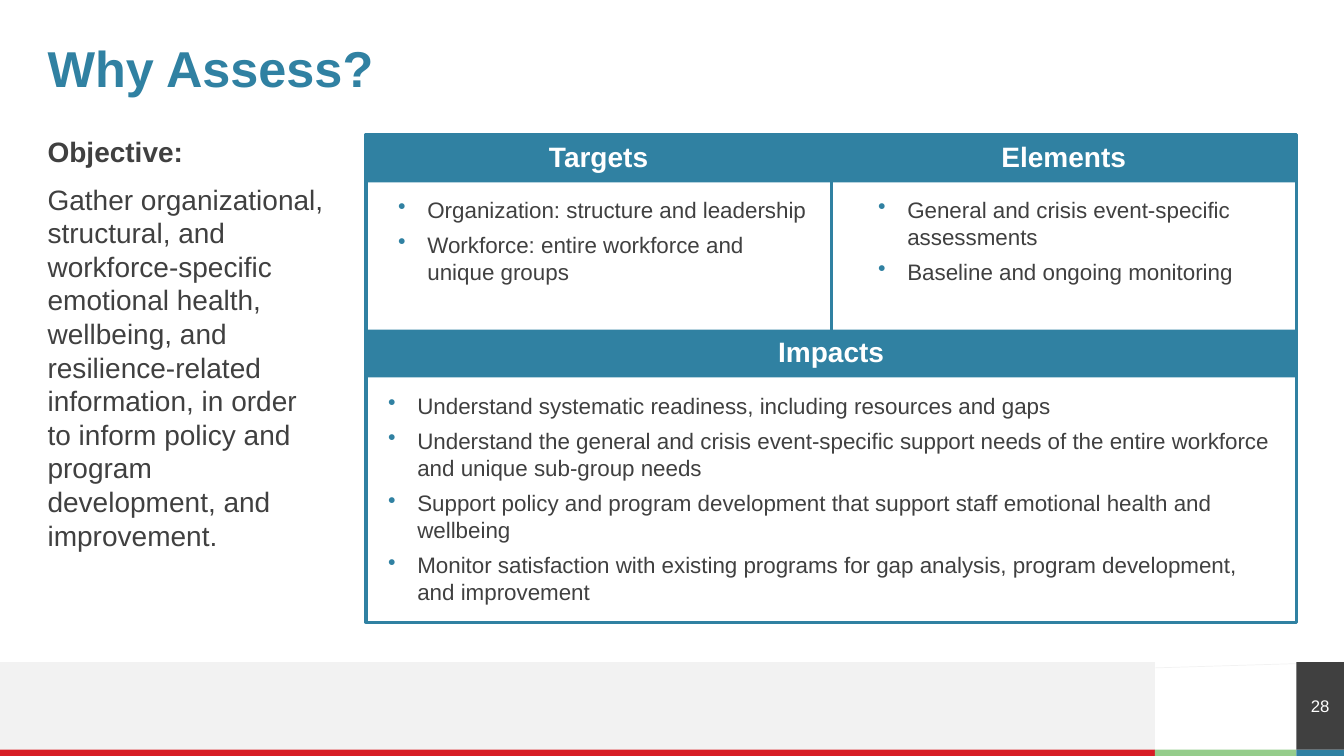
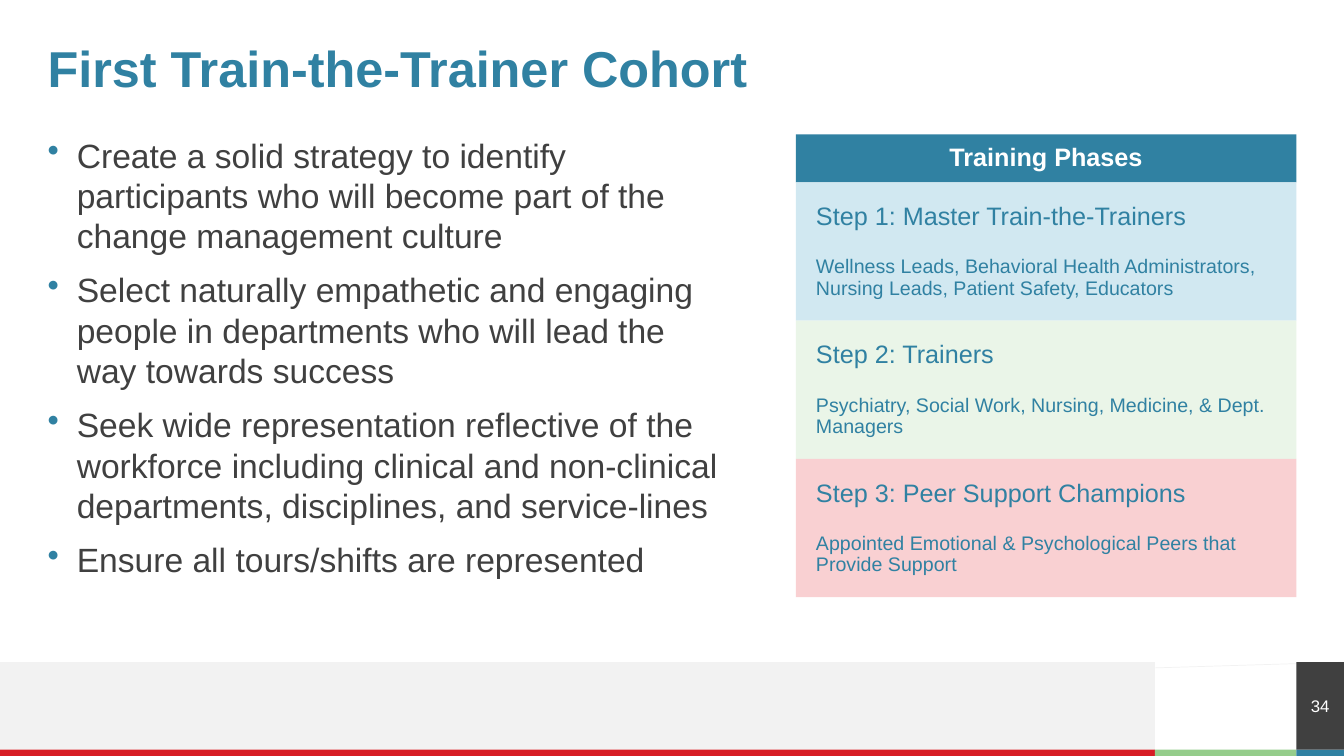
from lxml.etree import SubElement as Sub
from pptx import Presentation
from pptx.dml.color import RGBColor as Rgb
from pptx.enum.shapes import MSO_CONNECTOR as Conn, MSO_SHAPE as Kind
from pptx.enum.text import MSO_ANCHOR as Anchor, MSO_AUTO_SIZE as Auto, PP_ALIGN as Align
from pptx.oxml.ns import qn
from pptx.util import Pt

HUES = {
    "teal": "3081A2", "dark": "404040", "white": "FFFFFF", "grey": "F2F2F2",
    "red": "D71D24", "green": "95CD8B", "sky": "D1E8F1", "mint": "EAF5E8", "rose": "F9D0D2",
}
WIDE, HIGH = 960, 540
LEFT, RIGHT, TOP = 34, 926, 96
HEAD = 34.2
HANG = 20.9
FOOT, STRIP, SPLIT = 473, 535.5, 825

TITLE = {"size": 36, "bold": True, "color": "teal"}
LABEL = {"size": 20, "bold": True, "color": "white"}
BODY = {"size": 20, "color": "dark"}
SMALL = {"size": 16, "color": "dark"}
LARGE = {"size": 24, "color": "dark"}
STEP = {"size": 18, "color": "teal"}
DETAIL = {"size": 14, "color": "teal"}
PAGE = {"size": 12, "color": "white"}


def hue(name):
    return Rgb.from_string(HUES[name])


def place(box):
    return [Pt(n) for n in box]


def style(font, look):
    vals = {"name": "Arial", "bold": False, **look}
    font.color.rgb = hue(vals.pop("color"))
    vals["size"] = Pt(vals["size"])
    for key, val in vals.items():
        setattr(font, key, val)


def dot(para):
    props = para._p.get_or_add_pPr()
    props.set("marL", str(Pt(HANG)))
    props.set("indent", str(-Pt(HANG)))
    tint = Sub(props, qn("a:buClr"))
    Sub(tint, qn("a:srgbClr"), val=HUES["teal"])
    Sub(props, qn("a:buChar"), char="•")


def write(frame, lines, gap=0, space=None, align=Align.LEFT, anchor=Anchor.TOP, inset=0, dots=False):
    for key, val in {"word_wrap": True, "auto_size": Auto.NONE, "vertical_anchor": anchor}.items():
        setattr(frame, key, val)
    for side in ("left", "top", "right", "bottom"):
        setattr(frame, f"margin_{side}", Pt(inset))
    for i, (text, look) in enumerate(lines):
        para = frame.add_paragraph() if i else frame.paragraphs[0]
        if dots:
            dot(para)
        para.alignment = align
        para.space_before = Pt(gap if i else 0)
        if space:
            para.line_spacing = space
        run = para.add_run()
        run.text = text
        style(run.font, look)


def text(slide, box, lines, **opts):
    write(slide.shapes.add_textbox(*place(box)).text_frame, lines, **opts)


def points(slide, box, items, look, gap):
    text(slide, box, [(item, look) for item in items], gap=gap, dots=True)


def block(slide, box, fill=None, line=None):
    shape = slide.shapes.add_shape(Kind.RECTANGLE, *place(box))
    shape.shadow.inherit = False
    if fill:
        shape.fill.solid()
        shape.fill.fore_color.rgb = hue(fill)
    else:
        shape.fill.background()
    if line:
        shape.line.color.rgb = hue(line)
        shape.line.width = Pt(2.25)
    else:
        shape.line.fill.background()
    return shape


def rule(slide, ends, color, width):
    line = slide.shapes.add_connector(Conn.STRAIGHT, *place(ends))
    line.line.color.rgb = hue(color)
    line.line.width = Pt(width)
    Sub(line._element.spPr, qn("a:effectLst"))


def band(slide, box, label, size=20):
    shape = block(slide, box, "teal")
    write(shape.text_frame, [(label, {**LABEL, "size": size})],
          space=0.9, align=Align.CENTER, anchor=Anchor.MIDDLE)


def footer(slide, page):
    tall, thin = STRIP - FOOT, HIGH - STRIP
    block(slide, (0, FOOT, SPLIT, tall), "grey")
    stops = (0, SPLIT, RIGHT, WIDE)
    for x, end, fill in zip(stops, stops[1:], ("red", "green", "teal")):
        block(slide, (x, STRIP, end - x, thin), fill)
    rule(slide, (WIDE, FOOT, 0, 502), "grey", 0.5)
    tile = block(slide, (RIGHT, FOOT, WIDE - RIGHT, tall), "dark")
    write(tile.text_frame, [(page, PAGE)], align=Align.CENTER, anchor=Anchor.MIDDLE)


def start(deck, title, page):
    slide = deck.slides.add_slide(deck.slide_layouts[5])
    footer(slide, page)
    head = slide.shapes.title
    spots = zip(("left", "top", "width", "height"), (LEFT, 34, RIGHT - LEFT, 34))
    for key, val in spots:
        setattr(head, key, Pt(val))
    write(head.text_frame, [(title, TITLE)], space=0.9, anchor=Anchor.MIDDLE)
    return slide


def panel(slide, box, pair, last):
    x, y, w, h = box
    half, low = w / 2, y + 139.4
    for i, (label, inset, items) in enumerate(pair):
        left = x + i * half
        band(slide, (left, y, half, HEAD), label)
        points(slide, (left + inset, y + 44, 292.5, 90), items, SMALL, 6)
    label, items = last
    band(slide, (x, low, w, HEAD), label)
    points(slide, (x + 15.8, low + 44.6, w - 33, 161), items, SMALL, 6)
    block(slide, box, line="teal")
    rule(slide, (x + half, y, x + half, low), "teal", 2.25)


def phases(slide, box, label, steps):
    x, y, w, h = box
    band(slide, (x, y, w, HEAD), label, 18)
    tall = (h - HEAD) / len(steps)
    for i, (fill, name, who) in enumerate(steps):
        shape = block(slide, (x, y + HEAD + i * tall, w, tall), fill)
        write(shape.text_frame, [(name, STEP), (who, DETAIL)],
              gap=18.6, space=0.9, anchor=Anchor.MIDDLE, inset=14.4)


def assess(deck):
    slide = start(deck, "Why Assess?", "28")
    text(slide, (LEFT, TOP, 198, 348), [
        ("Objective:", {**BODY, "bold": True}),
        ("Gather organizational, structural, and workforce-specific emotional health, wellbeing, "
         "and resilience-related information, in order to inform policy and program development, "
         "and improvement.", BODY),
    ], gap=10)
    pair = [
        ("Targets", 23, ["Organization: structure and leadership",
                         "Workforce: entire workforce and unique groups"]),
        ("Elements", 33.5, ["General and crisis event-specific assessments",
                            "Baseline and ongoing monitoring"]),
    ]
    last = ("Impacts", [
        "Understand systematic readiness, including resources and gaps",
        "Understand the general and crisis event-specific support needs of the entire workforce "
        "and unique sub-group needs",
        "Support policy and program development that support staff emotional health and wellbeing",
        "Monitor satisfaction with existing programs for gap analysis, program development, "
        "and improvement",
    ])
    panel(slide, (261.4, TOP, RIGHT - 261.4, 348.5), pair, last)


def cohort(deck):
    slide = start(deck, "First Train-the-Trainer Cohort", "34")
    points(slide, (LEFT, TOP, 490, 348), [
        "Create a solid strategy to identify participants who will become part of the change "
        "management culture",
        "Select naturally empathetic and engaging people in departments who will lead the way "
        "towards success",
        "Seek wide representation reflective of the workforce including clinical and non-clinical "
        "departments, disciplines, and service-lines",
        "Ensure all tours/shifts are represented",
    ], LARGE, 10)
    phases(slide, (568.5, TOP, RIGHT - 568.5, 330.6), "Training Phases", [
        ("sky", "Step 1: Master Train-the-Trainers",
         "Wellness Leads, Behavioral Health Administrators, Nursing Leads, Patient Safety, Educators"),
        ("mint", "Step 2: Trainers",
         "Psychiatry, Social Work, Nursing, Medicine, & Dept. Managers"),
        ("rose", "Step 3: Peer Support Champions",
         "Appointed Emotional & Psychological Peers that Provide Support"),
    ])


def main():
    deck = Presentation()
    deck.slide_width, deck.slide_height = Pt(WIDE), Pt(HIGH)
    assess(deck)
    cohort(deck)
    deck.save("out.pptx")


if __name__ == "__main__":
    main()
